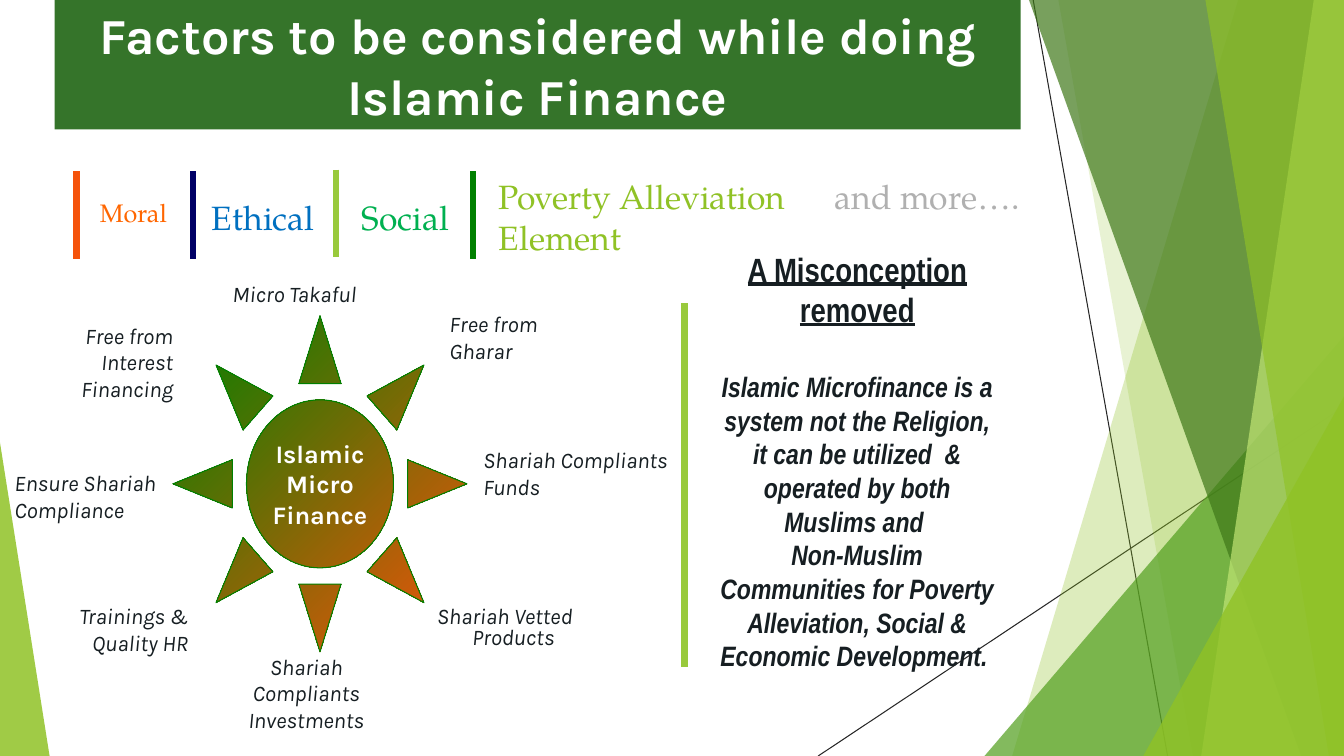
from pptx import Presentation
from pptx.dml.color import RGBColor
from pptx.enum.shapes import MSO_CONNECTOR, MSO_SHAPE
from pptx.enum.text import MSO_ANCHOR, PP_ALIGN
from pptx.oxml.ns import qn
from pptx.util import Inches, Pt
from lxml.etree import SubElement

LEFT, CENTER, RIGHT = PP_ALIGN.LEFT, PP_ALIGN.CENTER, PP_ALIGN.RIGHT
KARLA, PAGELLA, NARROW = "Karla", "TeX Gyre Pagella", "Arial Narrow"
INK, LIME, GREEN, ORANGE = "161E22", "99CA3C", "008000", "F5530B"

deck = Presentation()
deck.slide_width, deck.slide_height = Inches(13.33), Inches(7.5)
page = deck.slides.add_slide(deck.slide_layouts[6])
shapes = page.shapes

# Every length counts cells of a grid of 160 columns and 90 rows
COLUMNS, ROWS = 160, 90
column, row = deck.slide_width / COLUMNS, deck.slide_height / ROWS


def paint(shape, color, opacity=100):
    """Fill a shape with one colour, without outline or shadow."""
    shape.shadow.inherit = False
    shape.line.fill.background()
    shape.fill.solid()
    shape.fill.fore_color.rgb = RGBColor.from_string(color)
    if opacity < 100:
        tint = shape.fill._xPr.find(".//" + qn("a:srgbClr"))
        SubElement(tint, qn("a:alpha"), val=str(opacity * 1000))


def write(frame, text, size, font, color, align=LEFT, same_line=False,
          bold=False, italic=False, underline=False):
    """Add text as paragraphs, or as a further span of the last one."""
    frame.word_wrap = True
    for line in text.split("\n"):
        if same_line or not frame.text:
            para = frame.paragraphs[-1]
        else:
            para = frame.add_paragraph()
        para.alignment = align
        span = para.add_run()
        span.text = line
        span.font.size, span.font.name = Pt(size), font
        span.font.bold, span.font.italic = bold, italic
        span.font.underline = underline
        span.font.color.rgb = RGBColor.from_string(color)
    return para


# Thin background lines, heading bars and the divider
for x1, y1, x2, y2, color, weight in [
    (123, 0, 139, 90, "262626", 0.75),
    (160, 48.4, 97.4, 90, "262626", 0.75),
    (9.1, 20.4, 9.1, 30.8, ORANGE, 4.5),
    (23, 20.4, 23, 30.8, "000066", 4.5),
    (40, 20.2, 40, 30.6, LIME, 4.5),
    (56.3, 20.4, 56.3, 30.8, GREEN, 4.5),
    (81.5, 36.1, 81.5, 79.4, LIME, 4.5),
]:
    line = shapes.add_connector(
        MSO_CONNECTOR.STRAIGHT, int(x1 * column), int(y1 * row),
        int(x2 * column), int(y2 * row))
    line.line.color.rgb = RGBColor.from_string(color)
    line.line.width = Pt(weight)
    SubElement(line._element.spPr, qn("a:effectLst"))

# Background facets: slanted panels reach the right edge from top to bottom,
# triangles stand on the bottom edge with the tip at one side
for kind, first, second, width, color, opacity in [
    ("panel", 147.4, 120.5, None, "90C226", 30),
    ("panel", 126, 142, None, "90C226", 20),
    ("triangle", 117.2, 40, 42.8, "54A021", 72),
    ("panel", 122.5, 154.9, None, "3F7819", 70),
    ("panel", 156.4, 143, None, "C0E474", 70),
    ("panel", 143.5, 158.2, None, "90C226", 65),
    ("triangle", 136.1, 47.2, 23.9, "90C226", 80),
    ("triangle", 0, 52.7, 5.9, "90C226", 85),
]:
    if kind == "panel":
        outline = shapes.build_freeform(int(first * column), 0)
        outline.add_line_segments([
            (deck.slide_width, 0), (deck.slide_width, deck.slide_height),
            (int(second * column), deck.slide_height)])
        facet = outline.convert_to_shape()
    else:
        facet = shapes.add_shape(
            MSO_SHAPE.ISOSCELES_TRIANGLE, int(first * column),
            int(second * row), int(width * column), int((ROWS - second) * row))
        facet.adjustments[0] = 1 if first else 0
    paint(facet, color, opacity)

# Title band
band = shapes.add_shape(MSO_SHAPE.RECTANGLE, int(6.5 * column), 0,
                        int(115 * column), int(15.4 * row))
paint(band, "35742A")
band.text_frame.vertical_anchor = MSO_ANCHOR.MIDDLE
write(band.text_frame, "Factors to be considered while doing Islamic Finance",
      36, KARLA, "FFFFFF", CENTER, bold=True)

# Headings between the bars
for text, x, y, width, height, size, color in [
    ("Moral", 10.7, 22.9, 11.2, 4.8, 18, "FF6600"),
    ("Ethical", 24, 22.8, 20.8, 6, 24, "0070C0"),
    ("Social", 41.9, 22.8, 20.8, 6, 24, "00B050"),
    ("Poverty Alleviation Element", 58.2, 20.4, 38, 10.9, 24, "90C226"),
    ("and more", 98.2, 20.4, 29.3, 6, 24, "B0B0B0"),
]:
    heading = shapes.add_textbox(int(x * column), int(y * row),
                                 int(width * column), int(height * row))
    write(heading.text_frame, text, size, PAGELLA, color)
for text, font in [("…", "Times New Roman"), (".", PAGELLA)]:
    write(heading.text_frame, text, 24, font, "B0B0B0", same_line=True)

# Misconception column
box = shapes.add_textbox(int(84.1 * column), int(29 * row),
                         int(35.9 * column), int(53 * row))
frame = box.text_frame
write(frame, "A Misconception removed", 24, NARROW, INK, CENTER,
      bold=True, underline=True).space_after = Pt(29)
write(frame, "Islamic Microfinance is a system not the Religion, it can be "
      "utilized  & operated by both Muslims and \nNon-Muslim Communities for "
      "Poverty Alleviation, Social & Economic Development. ",
      20, NARROW, INK, CENTER, bold=True, italic=True)

# Sun
sun = shapes.add_shape(MSO_SHAPE.SUN, int(20.6 * column), int(37.6 * row),
                       int(35 * column), int(40 * row))
sun.shadow.inherit = False
sun.adjustments[0] = 0.25
sun.fill.gradient()
sun.fill.gradient_angle = 315
for stop, color, position in zip(sun.fill.gradient_stops,
                                 (GREEN, ORANGE), (0, 1)):
    stop.color.rgb = RGBColor.from_string(color)
    stop.position = position
sun.line.color.rgb = RGBColor.from_string(GREEN)
sun.line.width = Pt(0.75)
sun.text_frame.vertical_anchor = MSO_ANCHOR.MIDDLE
write(sun.text_frame, "Islamic\nMicro\nFinance", 18, KARLA, "FFFFFF",
      CENTER, bold=True)
sun.text_frame.word_wrap = False

# Labels around the sun
for text, x, y, width, height, align in [
    ("Ensure Shariah Compliance", 1.1, 56.2, 23, 5.8, LEFT),
    ("Shariah Compliants Investments", 26.8, 79.6, 19.3, 5.8, CENTER),
    ("Shariah Compliants Funds", 56.9, 53.4, 23.2, 5.8, LEFT),
    ("Free from Gharar", 52.9, 37.2, 19.3, 5.8, LEFT),
    ("Micro Takaful", 25.4, 32, 19.3, 5.8, CENTER),
    ("Free from Interest\nFinancing", 1.9, 39.6, 19.3, 7, RIGHT),
    ("Trainings & Quality HR", 5.5, 71.4, 17.5, 7, RIGHT),
    ("Shariah Vetted Products", 51.4, 70.3, 23.9, 9.1, LEFT),
]:
    label = shapes.add_textbox(int(x * column), int(y * row),
                               int(width * column), int(height * row))
    frame = label.text_frame
    frame.margin_left = frame.margin_right = Inches(0.05)
    frame.vertical_anchor = MSO_ANCHOR.MIDDLE
    para = write(frame, text, 16, KARLA, INK, align, italic=True)

# The last label has a hanging indent and tight lines
para.line_spacing = 0.8
indent = para._p.get_or_add_pPr()
indent.set("marL", str(Inches(0.35)))
indent.set("indent", str(-Inches(0.35)))

deck.save("out.pptx")
